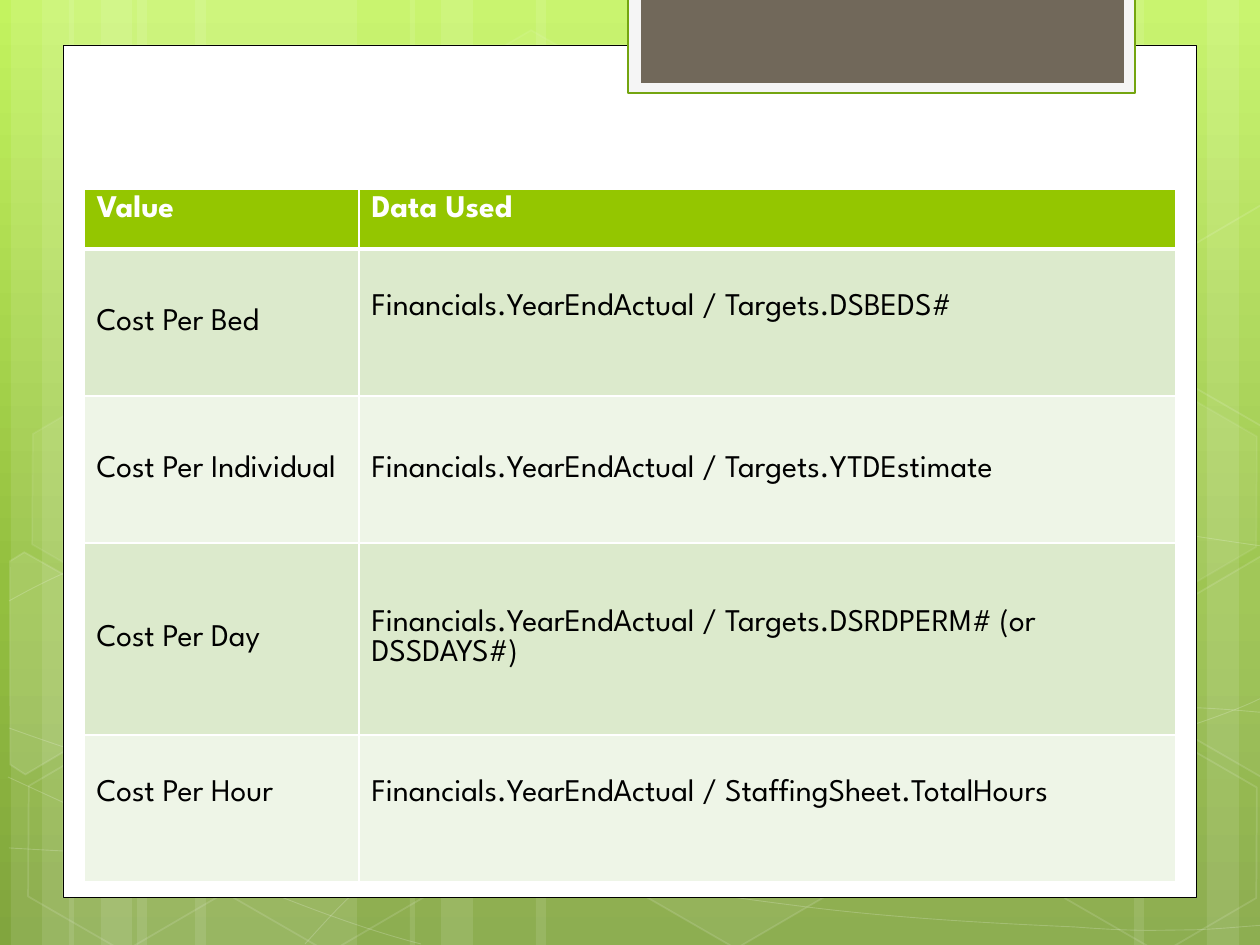
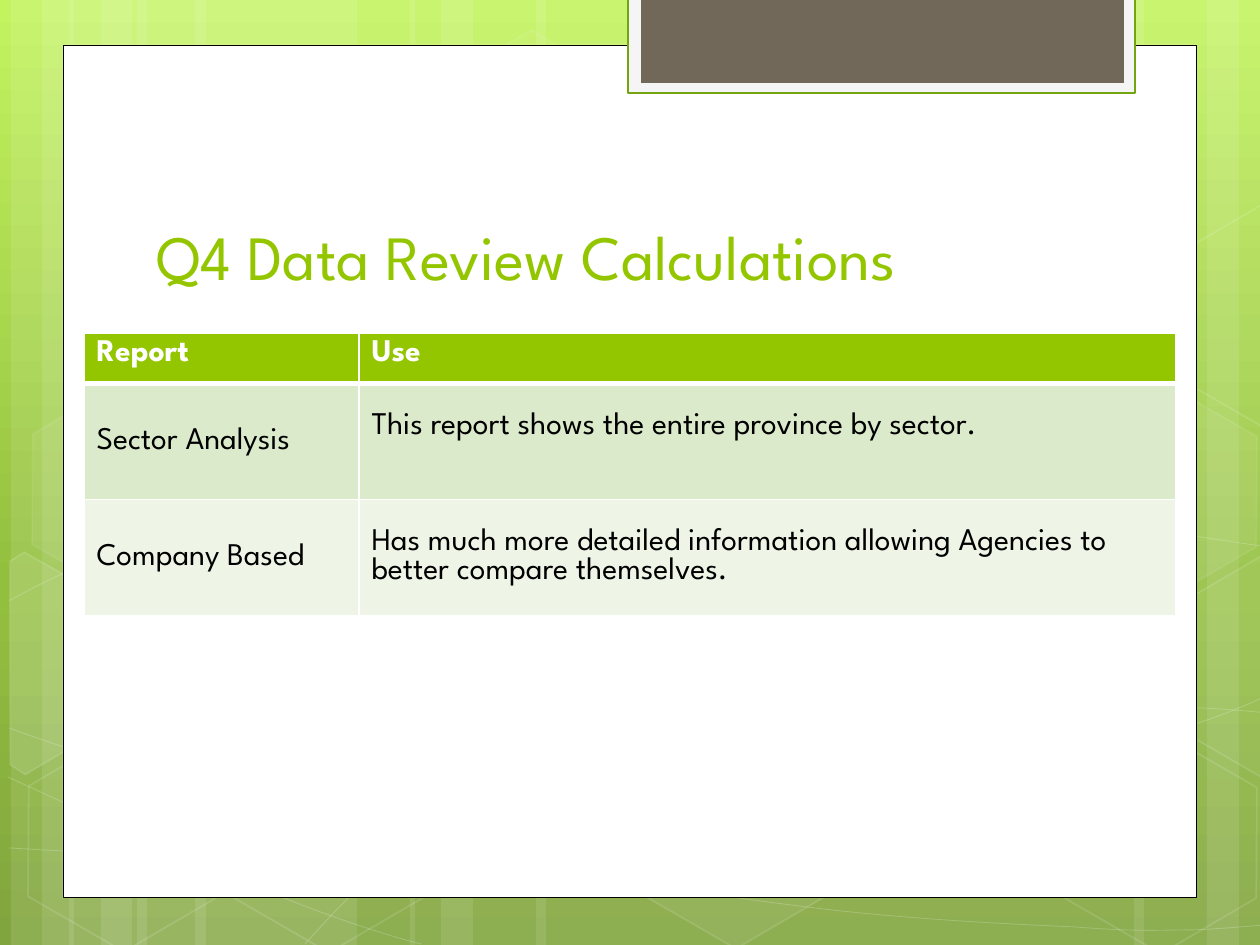
from copy import deepcopy
from math import cos, radians, sin

from lxml import etree
from pptx import Presentation
from pptx.dml.color import RGBColor
from pptx.enum import shapes, text
from pptx.oxml.ns import qn
from pptx.util import Inches, Pt

FONT = "League Spartan"
WHITE, BLACK, LIME = "FFFFFF", "000000", "94C600"
BANDS = ("DCEACC", "EEF5E7")
SKY = ((0, "C3F35F"), (0.62, "93BF3F"), (1, "81A53E"))
EMU_PER_PX = Inches(1) / 126

PAGE = (0, 0, 1260, 945)
SHEET = (63, 45, 1134, 853)
COLUMNS = (275, 817)
LINE_HEIGHT = 30
TILT = 30

STRIPES = {63: (11, 69, 410, 1207), 105: (42, 101, 441, 1134),
           220: (137, 195, 924), 388: (536,)}
CURVES = (
    ((9, 848), (77, 852), (145, 856), (239, 854), (334, 853), (451, 851), (577, 838),
     (703, 825), (882, 801), (998, 777), (1113, 753), (1231, 716), (1269, 694)),
    ((9, 601), (45, 581), (82, 562), (152, 543), (224, 524), (326, 496), (437, 488),
     (549, 479), (685, 478), (824, 488), (963, 498), (1193, 537), (1269, 547)),
    ((8, 777), (160, 847), (311, 916), (421, 944)),
    ((9, 728), (48, 742), (88, 756), (161, 776), (234, 795), (344, 827), (450, 848),
     (554, 869), (687, 892), (791, 905), (896, 919), (1008, 924), (1075, 927),
     (1140, 932), (1158, 930), (1191, 930), (1223, 929), (1246, 926), (1269, 925)),
    ((305, 944), (328, 919), (350, 893), (381, 871), (411, 848), (454, 824), (489, 805),
     (524, 788), (546, 780), (592, 767), (638, 755), (722, 737), (766, 728),
     (811, 719), (818, 719), (857, 717), (896, 714), (958, 709), (1000, 708),
     (1045, 707), (1116, 708), (1116, 708), (1144, 708), (1173, 708), (1201, 708),
     (1223, 709), (1245, 711), (1256, 712), (1268, 713), (1264, 712), (1268, 713)),
)
HEXAGONS = ((421, 45, 4, 8), (626, 742, 6, 12), (14, 745, 0, 12), (18, 393, 7, 8),
            (219, 746, 0, 12), (949, 571, 10, 12), (1051, 747, 0, 12), (1051, 396, 7, 8))
LEFT_CHIP = ((10, 561), (24, 552), (121, 607), (120, 718), (25, 774), (10, 765))
RIGHT_CHIP = ((1167, 611), (1261, 556), (1271, 562), (1271, 772), (1263, 777), (1167, 722))
CHIPS = ((LEFT_CHIP, (45, 674), 0, 10), (RIGHT_CHIP, (1241, 655), 0, 4),
         (RIGHT_CHIP, (1241, 655), -351, 0))


def px(length):
    return round(length * EMU_PER_PX)


def rgb(value):
    return RGBColor.from_string(value)


def fade(solid, percent):
    if percent < 100:
        alpha = etree.SubElement(solid[0], qn("a:alpha"))
        alpha.set("val", str(percent * 1000))


def dress(shape, fill=None, opacity=100, line=None, weight=1, line_opacity=100):
    shape.shadow.inherit = False
    props = shape._element.spPr
    if fill and opacity:
        shape.fill.solid()
        shape.fill.fore_color.rgb = rgb(fill)
        fade(props.find(qn("a:solidFill")), opacity)
    else:
        shape.fill.background()
    if line:
        shape.line.color.rgb = rgb(line)
        shape.line.width = Pt(weight)
        fade(props.find(qn("a:ln")).find(qn("a:solidFill")), line_opacity)
    else:
        shape.line.fill.background()


def add_preset(slide, kind, box, **look):
    shape = slide.shapes.add_shape(kind, *map(px, box))
    dress(shape, **look)
    return shape


def add_outline(slide, points, origin, close, **look):
    left, top = origin
    moved = [(left + x, top + y) for x, y in points]
    builder = slide.shapes.build_freeform(*moved[0], scale=EMU_PER_PX)
    builder.add_line_segments(moved[1:], close=close)
    outline = builder.convert_to_shape()
    dress(outline, **look)
    return outline


def bend(outline):
    segments = list(outline._element.iter(qn("a:lnTo")))
    for first in range(0, len(segments), 3):
        curve = etree.Element(qn("a:cubicBezTo"))
        segments[first].addprevious(curve)
        for segment in segments[first:first + 3]:
            curve.append(segment[0])
            segment.getparent().remove(segment)


def untilt(points, centre):
    across, down = centre
    c, s = cos(radians(TILT)), sin(radians(TILT))
    return [(across + (x - across) * c + (y - down) * s,
             down - (x - across) * s + (y - down) * c) for x, y in points]


def write(frame, words, size, color, bold=False):
    run = frame.paragraphs[0].add_run()
    run.text = words
    run.font.name = FONT
    run.font.size = Pt(size)
    run.font.bold = bold
    run.font.color.rgb = rgb(color)


def paint_sky(master):
    fill = master.background.fill
    fill.gradient()
    fill.gradient_angle = 270
    stops = master._element.find(".//" + qn("a:gsLst"))
    stops.insert(1, deepcopy(stops[0]))
    for stop, (position, color) in zip(fill.gradient_stops, SKY):
        stop.position = position
        stop.color.rgb = rgb(color)


def draw_backdrop(slide, box):
    left, top, _, height = box
    for width, offsets in STRIPES.items():
        for offset in offsets:
            add_preset(slide, shapes.MSO_SHAPE.RECTANGLE,
                       (left + offset, top, width, height), fill=WHITE, opacity=10)
    for knots in CURVES:
        bend(add_outline(slide, knots, (left, top), False,
                         line=WHITE, weight=0.5, line_opacity=20))
    for x, y, opacity, line_opacity in HEXAGONS:
        hexagon = add_preset(slide, shapes.MSO_SHAPE.HEXAGON, (left + x, top + y, 220, 192),
                             fill=WHITE, opacity=opacity, line=WHITE, line_opacity=line_opacity)
        hexagon.adjustments[0] = 0.285
        hexagon.rotation = TILT
    for corners, centre, drop, opacity in CHIPS:
        chip = add_outline(slide, untilt(corners, centre), (left, top + drop), True,
                           fill=WHITE, opacity=opacity, line=WHITE, line_opacity=12)
        chip.rotation = TILT


def draw_sheet(slide, box):
    left, top, _, _ = box
    rectangle = shapes.MSO_SHAPE.RECTANGLE
    add_preset(slide, rectangle, box, fill=WHITE, line=BLACK, weight=0.5)
    add_preset(slide, rectangle, (left + 565, top - 47, 507, 95),
               fill="F5F5F5", line="74A510", weight=1.25)
    add_preset(slide, rectangle, (left + 578, top - 47, 483, 85), fill="71685A")


def draw_title(slide, box, words):
    left, top, _, _ = box
    title = slide.shapes.add_textbox(*map(px, (left + 81, top + 97, 968, 157)))
    frame = title.text_frame
    frame.word_wrap = True
    frame.vertical_anchor = text.MSO_ANCHOR.BOTTOM
    write(frame, words, 36, LIME)


def border(cell, weights):
    props = cell._tc.get_or_add_tcPr()
    for place, (side, weight) in enumerate(weights.items()):
        edge = etree.Element(qn(f"a:ln{side}"), w=str(Pt(weight)))
        solid = etree.SubElement(edge, qn("a:solidFill"))
        etree.SubElement(solid, qn("a:srgbClr"), val=WHITE)
        props.insert(place, edge)


def draw_table(slide, box, drop, heights, rows, raised):
    left, top, _, _ = box
    frame = slide.shapes.add_table(
        len(rows), len(COLUMNS),
        *map(px, (left + 21, top + drop, sum(COLUMNS), sum(heights))))
    table = frame.table
    for column, width in zip(table.columns, COLUMNS):
        column.width = px(width)
    for index, (height, entries) in enumerate(zip(heights, rows)):
        table.rows[index].height = px(height)
        heading = index == 0
        for place, words in enumerate(entries):
            cell = table.cell(index, place)
            cell.fill.solid()
            cell.fill.fore_color.rgb = rgb(LIME if heading else BANDS[(index - 1) % 2])
            cell.vertical_anchor = text.MSO_ANCHOR.TOP if heading else text.MSO_ANCHOR.MIDDLE
            if (index, place) in raised:
                cell.margin_bottom = px(6 + LINE_HEIGHT)
            border(cell, {"L": 1, "R": 1, "T": 3 if index == 1 else 1, "B": 3 if heading else 1})
            write(cell.text_frame, words, 18, WHITE if heading else BLACK, heading)


def add_page(deck):
    slide = deck.slides.add_slide(deck.slide_layouts[6])
    draw_backdrop(slide, PAGE)
    draw_sheet(slide, SHEET)
    return slide


def main():
    deck = Presentation()
    deck.slide_width, deck.slide_height = map(px, PAGE[2:])
    paint_sky(deck.slide_master)

    costs = add_page(deck)
    draw_table(costs, SHEET, 144, (60, 147, 147, 192, 147), (
        ("Value", "Data Used"),
        ("Cost Per Bed", "Financials.YearEndActual / Targets.DSBEDS#"),
        ("Cost Per Individual", "Financials.YearEndActual / Targets.YTDEstimate"),
        ("Cost Per Day", "Financials.YearEndActual / Targets.DSRDPERM# (or DSSDAYS#)"),
        ("Cost Per Hour", "Financials.YearEndActual / StaffingSheet.TotalHours"),
    ), {(1, 1), (4, 0), (4, 1)})

    reports = add_page(deck)
    draw_title(reports, SHEET, "Q4 Data Review Calculations")
    draw_table(reports, SHEET, 288, (43, 116, 116), (
        ("Report", "Use"),
        ("Sector Analysis", "This report shows the entire province by sector."),
        ("Company Based", "Has much more detailed information allowing Agencies to "
                          "better compare themselves."),
    ), {(1, 1)})

    deck.save("out.pptx")


if __name__ == "__main__":
    main()
